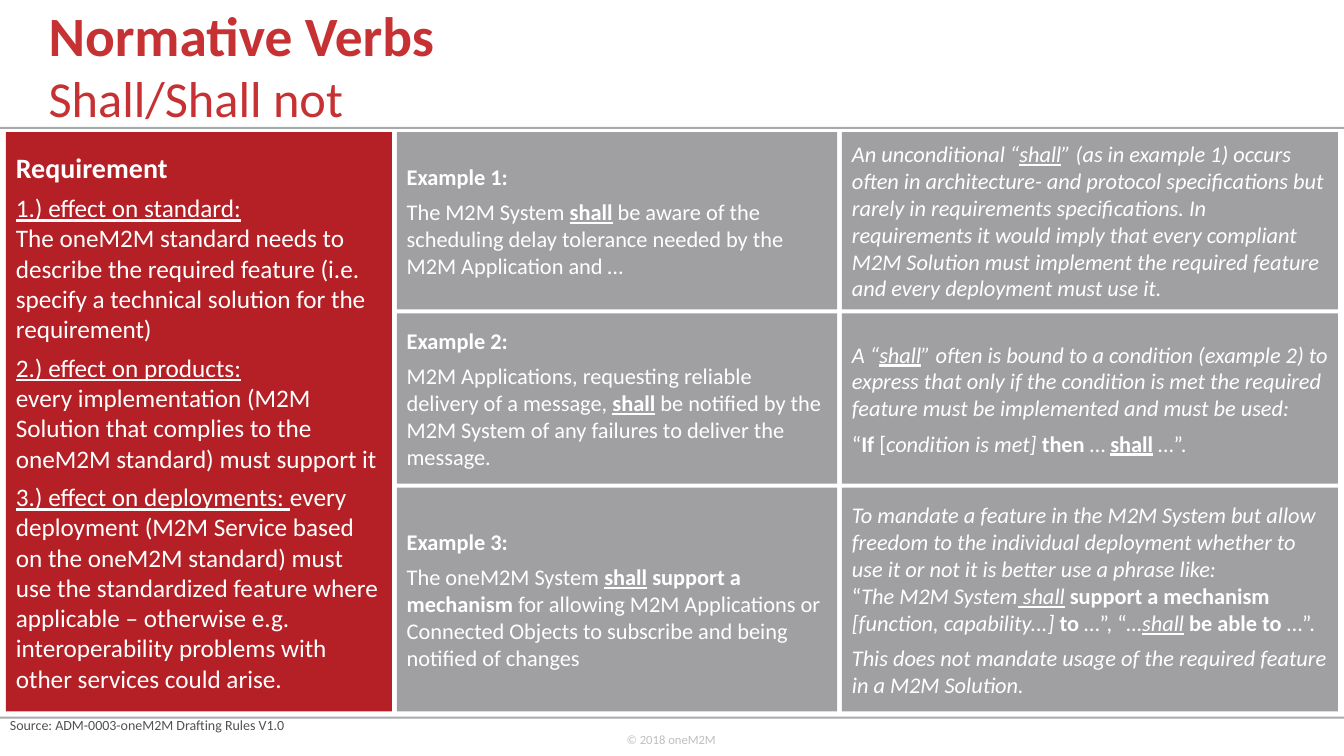
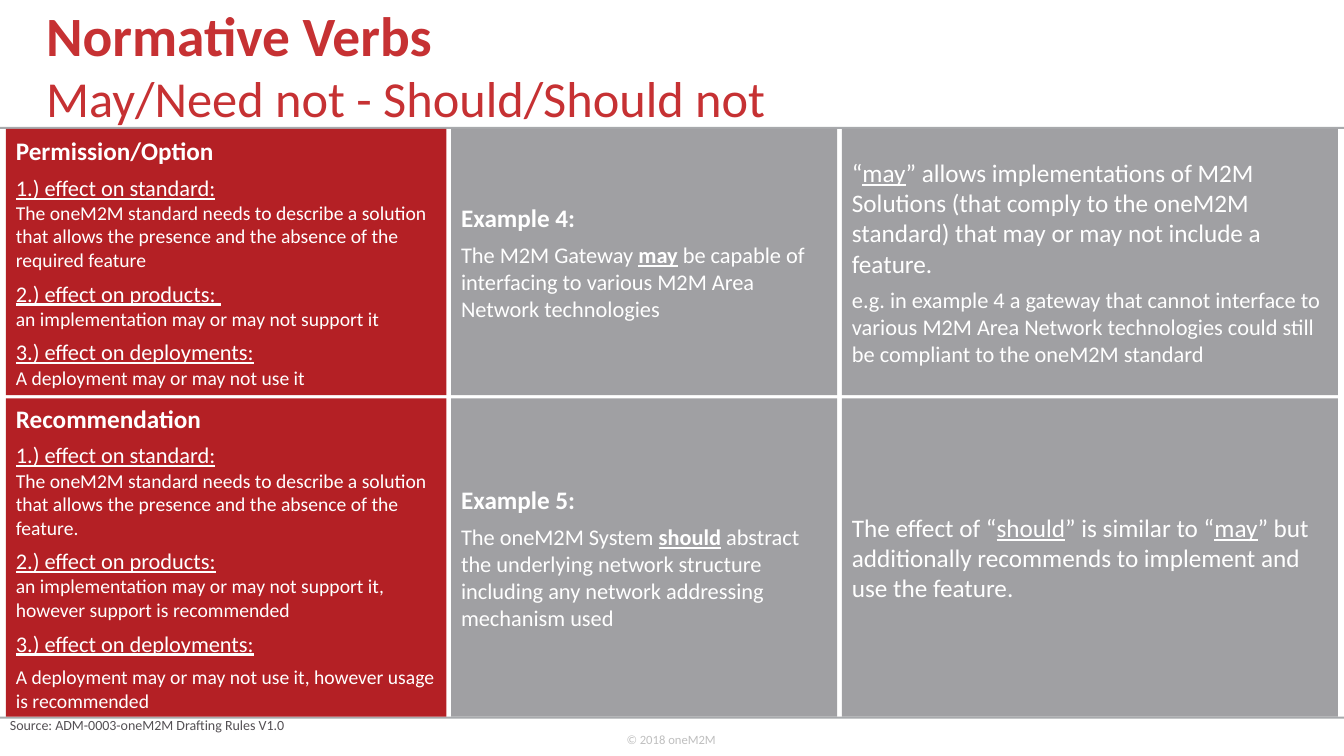
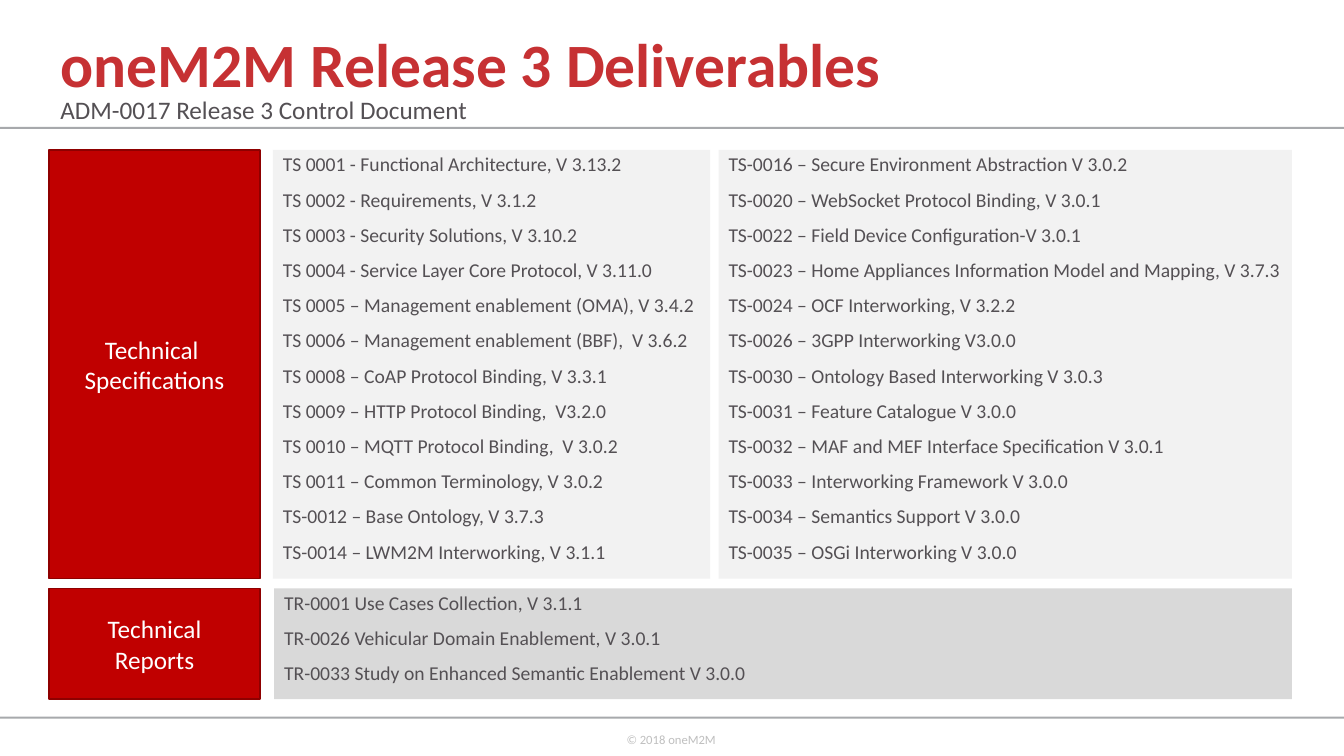
from copy import deepcopy
from dataclasses import dataclass

from pptx import Presentation
from pptx import util as u
from pptx.dml.color import RGBColor
from pptx.enum import shapes, text


@dataclass(frozen=True)
class Theme:
    font: str = "Calibri"
    title: str = "C63133"
    rule: str = "A7A9AC"
    copyright: str = "BFBFBF"
    ink: str = "545054"
    white: str = "FFFFFF"
    red: str = "B42025"
    gray: str = "A0A0A3"
    tag: str = "C00000"
    tag_edge: str = "8E0000"
    light: str = "F2F2F2"
    medium: str = "D9D9D9"
    size_headline: float = 44
    size_title: float = 39.6
    size_subtitle: float = 36
    size_heading: float = 20
    size_large: float = 18
    size_body: float = 16
    size_small: float = 14
    size_source: float = 10
    size_copyright: float = 9


theme = Theme()
HEADING, LARGE, BODY, SMALL = theme.size_heading, theme.size_large, theme.size_body, theme.size_small


def write_text(frame, paragraphs, color, alignment=text.PP_ALIGN.LEFT, space=6, line_spacing=None):
    """Fill a frame; a run is (text, size, flags) with flags from b, i and u."""
    for index, runs in enumerate(paragraphs):
        paragraph = frame.add_paragraph() if index else frame.paragraphs[0]
        paragraph.alignment = alignment
        paragraph.space_before = u.Pt(space if index else 0)
        if line_spacing:
            paragraph.line_spacing = line_spacing
        for words, size, flags in runs:
            for number, part in enumerate(words.split("\n")):
                if number:
                    paragraph.add_line_break()
                    paragraph._p[-1].insert(0, deepcopy(run._r.rPr))
                if not part:
                    continue
                run = paragraph.add_run()
                run.text = part
                run.font.name = theme.font
                run.font.size = u.Pt(size)
                run.font.color.rgb = RGBColor.from_string(color)
                run.font.bold = "b" in flags
                run.font.italic = "i" in flags
                run.font.underline = "u" in flags


def add_panel(slide, place, fill, edge=None, anchor=text.MSO_ANCHOR.MIDDLE):
    """Add a flat rectangle placed in centimetres and return its text frame."""
    shape = slide.shapes.add_shape(shapes.MSO_SHAPE.RECTANGLE, *map(u.Cm, place))
    shape.shadow.inherit = False
    shape.fill.solid()
    shape.fill.fore_color.rgb = RGBColor.from_string(fill)
    if edge:
        shape.line.color.rgb = RGBColor.from_string(edge)
        shape.line.width = u.Pt(1)
    else:
        shape.line.fill.background()
    shape.text_frame.word_wrap = True
    shape.text_frame.vertical_anchor = anchor
    return shape.text_frame


presentation = Presentation()
presentation.slide_width = u.Cm(33.87)
presentation.slide_height = u.Cm(19.05)

# Titles, rules and footers
copyright_label = ((15.54, 18.31, 2.77, 1.02), "© 2018 oneM2M", theme.size_copyright, theme.copyright)
source_label = ((0, 17.93, 7.62, 0.69), "Source: ADM-0003-oneM2M Drafting Rules V1.0",
                theme.size_source, theme.ink)
control_label = ((1.27, 2.24, 10.9, 1.02), "ADM-0017 Release 3 Control Document", LARGE, theme.ink)

verbs = ("Normative Verbs\n", theme.size_title, "b")
headers = [
    (0.97, 0.94, [verbs, ("Shall/Shall not", theme.size_subtitle, "")], source_label),
    (0.91, 0.94, [verbs, ("May/Need not - Should/Should not", theme.size_subtitle, "")], source_label),
    (1.27, 0.23, [("oneM2M Release 3 Deliverables", theme.size_headline, "b")], control_label),
]
slides = []
for left, top, title_runs, extra_label in headers:
    slide = presentation.slides.add_slide(presentation.slide_layouts[5])
    slides.append(slide)
    for rule_top in (3.2, 18.06):
        add_panel(slide, (0, rule_top, 33.87, 0.05), theme.rule)
    title = slide.shapes.title
    title.left, title.top, title.width, title.height = map(u.Cm, (left, top, 31.78, 2.41))
    title.text_frame.word_wrap = True
    title.text_frame.auto_size = text.MSO_AUTO_SIZE.NONE
    title.text_frame.vertical_anchor = text.MSO_ANCHOR.BOTTOM
    write_text(title.text_frame, [title_runs], theme.title)
    for place, words, size, color in (copyright_label, extra_label):
        label = slide.shapes.add_textbox(*map(u.Cm, place))
        label.text_frame.word_wrap = False
        label.text_frame.auto_size = text.MSO_AUTO_SIZE.SHAPE_TO_FIT_TEXT
        write_text(label.text_frame, [[(words, size, "")]], color)

# Normative verbs: each column holds its width, fill and cells of (height, paragraphs)
shall_columns = [
    (9.73, theme.red, [
        (14.6, [
            [("Requirement", HEADING, "b")],
            [("1.) effect on standard:", LARGE, "u"),
             (" \nThe oneM2M standard needs to describe the required feature (i.e. specify a technical "
              "solution for the requirement)", LARGE, "")],
            [("2.) effect on products:\n", LARGE, "u"),
             ("every implementation (M2M Solution that complies to the oneM2M standard) must support it",
              LARGE, "")],
            [("3.) effect on deployments: ", LARGE, "u"),
             ("every deployment (M2M Service based on the oneM2M standard) must use the standardized "
              "feature where applicable – otherwise e.g. interoperability problems with other services "
              "could arise.", LARGE, "")],
        ]),
    ]),
    (11.1, theme.gray, [
        (4.47, [
            [("Example 1:", BODY, "b")],
            [("The M2M System ", BODY, ""), ("shall", BODY, "bu"),
             (" be aware of the scheduling delay tolerance needed by the M2M Application and …", BODY, "")],
        ]),
        (4.29, [
            [("Example 2:", BODY, "b")],
            [("M2M Applications, requesting reliable delivery of a message, ", BODY, ""),
             ("shall", BODY, "bu"),
             (" be notified by the M2M System of any failures to deliver the message.", BODY, "")],
        ]),
        (5.64, [
            [("Example 3:", BODY, "b")],
            [("The oneM2M System ", BODY, ""), ("shall", BODY, "bu"), (" support a mechanism", BODY, "b"),
             (" for allowing M2M Applications or Connected Objects to subscribe and being notified of "
              "changes", BODY, "")],
        ]),
    ]),
    (12.5, theme.gray, [
        (4.47, [
            [("An unconditional “", BODY, "i"), ("shall", BODY, "iu"),
             ("” (as in example 1) occurs often in architecture- and protocol specifications but rarely "
              "in requirements specifications. In requirements it would imply that every compliant M2M "
              "Solution must implement the required feature and every deployment must use it.", BODY, "i")],
        ]),
        (4.29, [
            [("A “", BODY, "i"), ("shall", BODY, "iu"),
             ("” often is bound to a condition (example 2) to express that only if the condition is met "
              "the required feature must be implemented and must be used:", BODY, "i")],
            [("“", BODY, ""), ("If", BODY, "b"), (" [", BODY, ""), ("condition is met] ", BODY, "i"),
             ("then", BODY, "b"), (" … ", BODY, ""), ("shall", BODY, "bu"), (" …”.", BODY, "")],
        ]),
        (5.64, [
            [("To mandate a feature in the M2M System but allow freedom to the individual deployment "
              "whether to use it or not it is better use a phrase like:\n", BODY, "i"),
             ("“", BODY, ""), ("The M2M System", BODY, "i"), (" shall", BODY, "iu"), (" ", BODY, "i"),
             ("support a mechanism ", BODY, "b"), ("[function, capability...] ", BODY, "i"),
             ("to", BODY, "b"), (" …”, “", BODY, ""), ("…", BODY, "i"), ("shall", BODY, "iu"),
             (" ", BODY, "i"), ("be able to ", BODY, "b"), ("…”.", BODY, "")],
            [("This does not mandate usage of the required feature in a M2M Solution.", BODY, "i")],
        ]),
    ]),
]
may_columns = [
    (11.1, theme.red, [
        (6.71, [
            [("Permission/Option", LARGE, "b")],
            [("1.) effect on standard:", BODY, "u"), (" \n", BODY, ""),
             ("The oneM2M standard needs to describe a solution that allows the presence and the absence "
              "of the required feature", SMALL, "")],
            [("2.) effect on products: \n", BODY, "u"),
             ("an implementation may or may not support it", SMALL, "")],
            [("3.) effect on deployments:\n", BODY, "u"),
             ("A deployment may or may not use it", SMALL, "")],
        ]),
        (8.02, [
            [("Recommendation", LARGE, "b")],
            [("1.) effect on standard:", BODY, "u"), (" \n", BODY, ""),
             ("The oneM2M standard needs to describe a solution that allows the presence and the absence "
              "of the feature.", SMALL, "")],
            [("2.) effect on products:\n", BODY, "u"),
             ("an implementation may or may not support it, however support is recommended", SMALL, "")],
            [("3.) effect on deployments:", BODY, "u")],
            [("A deployment may or may not use it, however usage is recommended", SMALL, "")],
        ]),
    ]),
    (9.73, theme.gray, [
        (6.71, [
            [("Example 4:", LARGE, "b")],
            [("The M2M Gateway ", BODY, ""), ("may", BODY, "bu"),
             (" be capable of interfacing to various M2M Area Network technologies", BODY, "")],
        ]),
        (8.02, [
            [("Example 5:", LARGE, "b")],
            [("The oneM2M System ", BODY, ""), ("should", BODY, "bu"),
             (" abstract the underlying network structure including any network addressing mechanism used",
              BODY, "")],
        ]),
    ]),
    (12.5, theme.gray, [
        (6.71, [
            [("“", LARGE, ""), ("may", LARGE, "u"),
             ("” allows implementations of M2M Solutions (that comply to the oneM2M standard) that may or "
              "may not include a feature.", LARGE, "")],
            [("e.g. in example 4 a gateway that cannot interface to various M2M Area Network technologies "
              "could still be compliant to the oneM2M standard", BODY, "")],
        ]),
        (8.02, [
            [("The effect of “", LARGE, ""), ("should", LARGE, "u"), ("” is similar to “", LARGE, ""),
             ("may", LARGE, "u"),
             ("” but additionally recommends to implement and use the feature.", LARGE, "")],
        ]),
    ]),
]
column_gap = 0.12
for slide, columns, first_top, row_gap in (
    (slides[0], shall_columns, 3.33, 0.1),
    (slides[1], may_columns, 3.25, 0.08),
):
    left = 0.15
    for width, fill, cells in columns:
        top = first_top
        for height, paragraphs in cells:
            write_text(add_panel(slide, (left, top, width, height), fill), paragraphs, theme.white)
            top += height + row_gap
        left += width + column_gap

# Release 3 deliverables
specifications_row, reports_row = (3.78, 10.8), (14.83, 2.79)
deliverables = [
    ((6.88, 11.02), specifications_row, theme.light, [
        "TS 0001 - Functional Architecture, V 3.13.2",
        "TS 0002 - Requirements, V 3.1.2",
        "TS 0003 - Security Solutions, V 3.10.2",
        "TS 0004 - Service Layer Core Protocol, V 3.11.0",
        "TS 0005 – Management enablement (OMA), V 3.4.2",
        "TS 0006 – Management enablement (BBF),  V 3.6.2",
        "TS 0008 – CoAP Protocol Binding, V 3.3.1",
        "TS 0009 – HTTP Protocol Binding,  V3.2.0",
        "TS 0010 – MQTT Protocol Binding,  V 3.0.2",
        "TS 0011 – Common Terminology, V 3.0.2",
        "TS-0012 – Base Ontology, V 3.7.3",
        "TS-0014 – LWM2M Interworking, V 3.1.1",
    ]),
    ((18.11, 14.45), specifications_row, theme.light, [
        "TS-0016 – Secure Environment Abstraction V 3.0.2",
        "TS-0020 – WebSocket Protocol Binding, V 3.0.1",
        "TS-0022 – Field Device Configuration-V 3.0.1",
        "TS-0023 – Home Appliances Information Model and Mapping, V 3.7.3",
        "TS-0024 – OCF Interworking, V 3.2.2",
        "TS-0026 – 3GPP Interworking V3.0.0",
        "TS-0030 – Ontology Based Interworking V 3.0.3",
        "TS-0031 – Feature Catalogue V 3.0.0",
        "TS-0032 – MAF and MEF Interface Specification V 3.0.1",
        "TS-0033 – Interworking Framework V 3.0.0",
        "TS-0034 – Semantics Support V 3.0.0",
        "TS-0035 – OSGi Interworking V 3.0.0",
    ]),
    ((6.91, 25.65), reports_row, theme.medium, [
        "TR-0001 Use Cases Collection, V 3.1.1",
        "TR-0026 Vehicular Domain Enablement, V 3.0.1",
        "TR-0033 Study on Enhanced Semantic Enablement V 3.0.0",
    ]),
]
for (left, width), (top, height), fill, documents in deliverables:
    frame = add_panel(slides[2], (left, top, width, height), fill, anchor=text.MSO_ANCHOR.TOP)
    write_text(frame, [[(document, SMALL, "")] for document in documents], theme.ink,
               space=10, line_spacing=0.9)
for (top, height), words in (
    (specifications_row, "Technical \nSpecifications"),
    (reports_row, "Technical\nReports"),
):
    frame = add_panel(slides[2], (1.24, top, 5.31, height), theme.tag, theme.tag_edge)
    write_text(frame, [[(words, LARGE, "")]], theme.white, text.PP_ALIGN.CENTER)

presentation.save("out.pptx")
